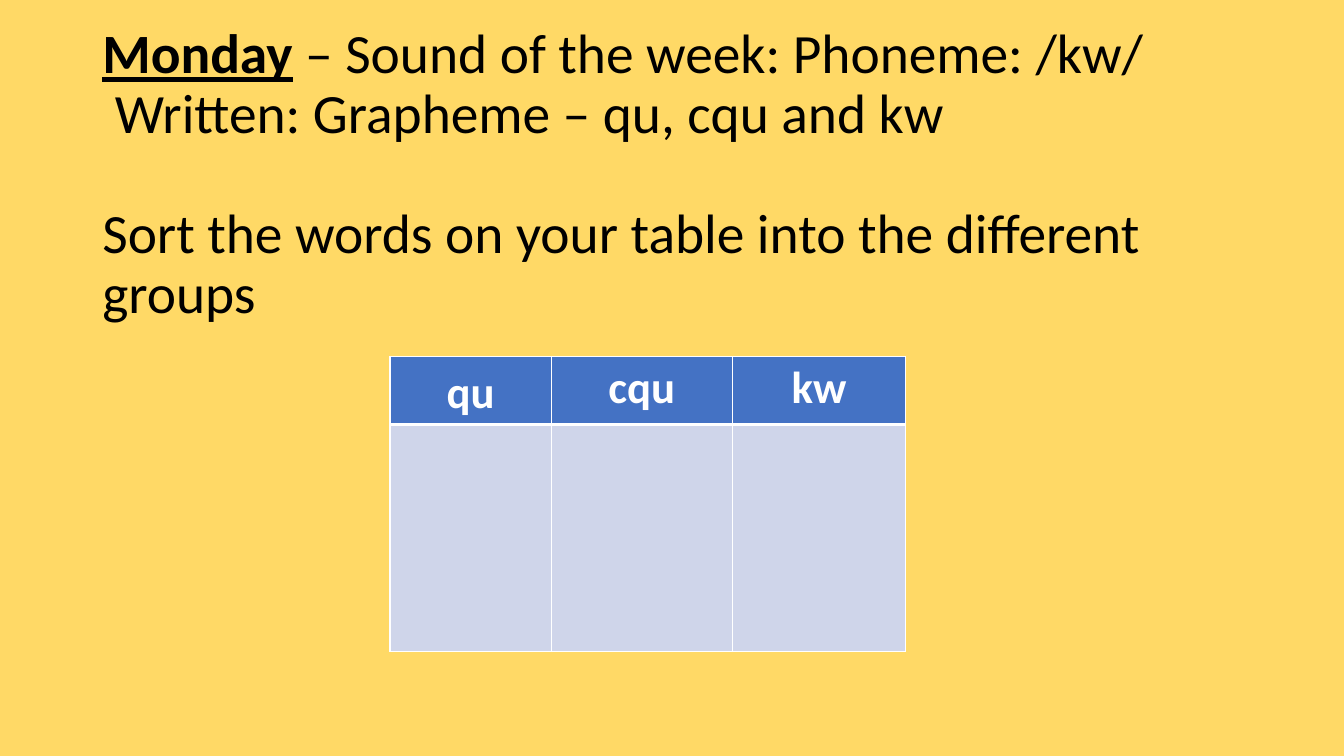
from lxml import etree
from pptx import Presentation
from pptx.dml.color import RGBColor
from pptx.enum.text import MSO_ANCHOR, PP_ALIGN
from pptx.oxml.ns import qn
from pptx.util import Cm, Pt

TOP = MSO_ANCHOR.TOP
CENTER = PP_ALIGN.CENTER

YELLOW = RGBColor(0xFF, 0xD9, 0x66)
BLACK = RGBColor(0x00, 0x00, 0x00)
WHITE = RGBColor(0xFF, 0xFF, 0xFF)
BLUE = RGBColor(0x44, 0x72, 0xC4)
PALE_BLUE = RGBColor(0xCF, 0xD5, 0xEA)


class LessonSlide:
    font_name = "Calibri"
    heading_size = Pt(39.6)
    header_size = Pt(32)
    thin, thick = Pt(1), Pt(3)

    def __init__(self, presentation):
        self.slide = presentation.slides.add_slide(presentation.slide_layouts[6])
        fill = self.slide.background.fill
        fill.solid()
        fill.fore_color.rgb = YELLOW

    def style(self, paragraph, size, color, spacing):
        paragraph.font.name = self.font_name
        paragraph.font.size = size
        paragraph.font.color.rgb = color
        paragraph.line_spacing = spacing

    def heading(self, left, top, width, height, day, lines, gap):
        """Put the day in front of the first line and a gap before the last."""
        shape = self.slide.shapes.add_textbox(left, top, width, height)
        frame = shape.text_frame
        frame.word_wrap = True
        frame.vertical_anchor = TOP
        for index, line in enumerate(lines):
            paragraph = frame.add_paragraph() if index else frame.paragraphs[0]
            self.style(paragraph, self.heading_size, BLACK, 0.9)
            if index == 0:
                run = paragraph.add_run()
                run.text = day
                run.font.bold = True
                run.font.underline = True
            paragraph.add_run().text = line
        paragraph.space_before = gap

    def borders(self, cell, top, bottom):
        properties = cell._tc.get_or_add_tcPr()
        edges = {"a:lnL": self.thin, "a:lnR": self.thin, "a:lnT": top, "a:lnB": bottom}
        for index, (tag, width) in enumerate(edges.items()):
            line = etree.Element(qn(tag), w=str(int(width)))
            solid = etree.SubElement(line, qn("a:solidFill"))
            etree.SubElement(solid, qn("a:srgbClr"), val=str(WHITE))
            properties.insert(index, line)

    def sorting_table(self, left, top, widths, heights, headers):
        """Draw a header row above one empty row to sort words into."""
        frame = self.slide.shapes.add_table(
            2, len(headers), left, top, sum(widths), sum(heights))
        table = frame.table
        for row, height in zip(table.rows, heights):
            row.height = height
        for index, (header, width) in enumerate(zip(headers, widths)):
            table.columns[index].width = width
            head, body = table.cell(0, index), table.cell(1, index)
            for cell, color in ((head, BLUE), (body, PALE_BLUE)):
                cell.fill.solid()
                cell.fill.fore_color.rgb = color
            self.borders(head, self.thin, self.thick)
            self.borders(body, self.thick, self.thin)

            head.text = header
            paragraph = head.text_frame.paragraphs[0]
            self.style(paragraph, self.header_size, WHITE, 1.07)
            paragraph.font.bold = True
            paragraph.alignment = CENTER
            paragraph.space_after = Pt(8)
            # Only the first header keeps the default margins
            if index:
                head.margin_left = head.margin_right = 0
                head.margin_top = head.margin_bottom = 0


def main():
    presentation = Presentation()
    presentation.slide_width = Cm(33.87)
    presentation.slide_height = Cm(19.05)
    lesson = LessonSlide(presentation)

    # Sound of the week and the task
    lesson.heading(
        Cm(2.33), Cm(0.53), Cm(29.21), Cm(7.8), "Monday",
        [" – Sound of the week: Phoneme: /kw/",
         " Written: Grapheme – qu, cqu and kw",
         "Sort the words on your table into the different groups"],
        gap=Pt(43))

    # Table for sorting the words
    lesson.sorting_table(
        Cm(9.83), Cm(8.99), [Cm(4.06), Cm(4.57), Cm(4.37)],
        [Cm(1.65), Cm(5.72)], ["qu", "cqu", "kw"])

    presentation.save("out.pptx")


if __name__ == "__main__":
    main()
